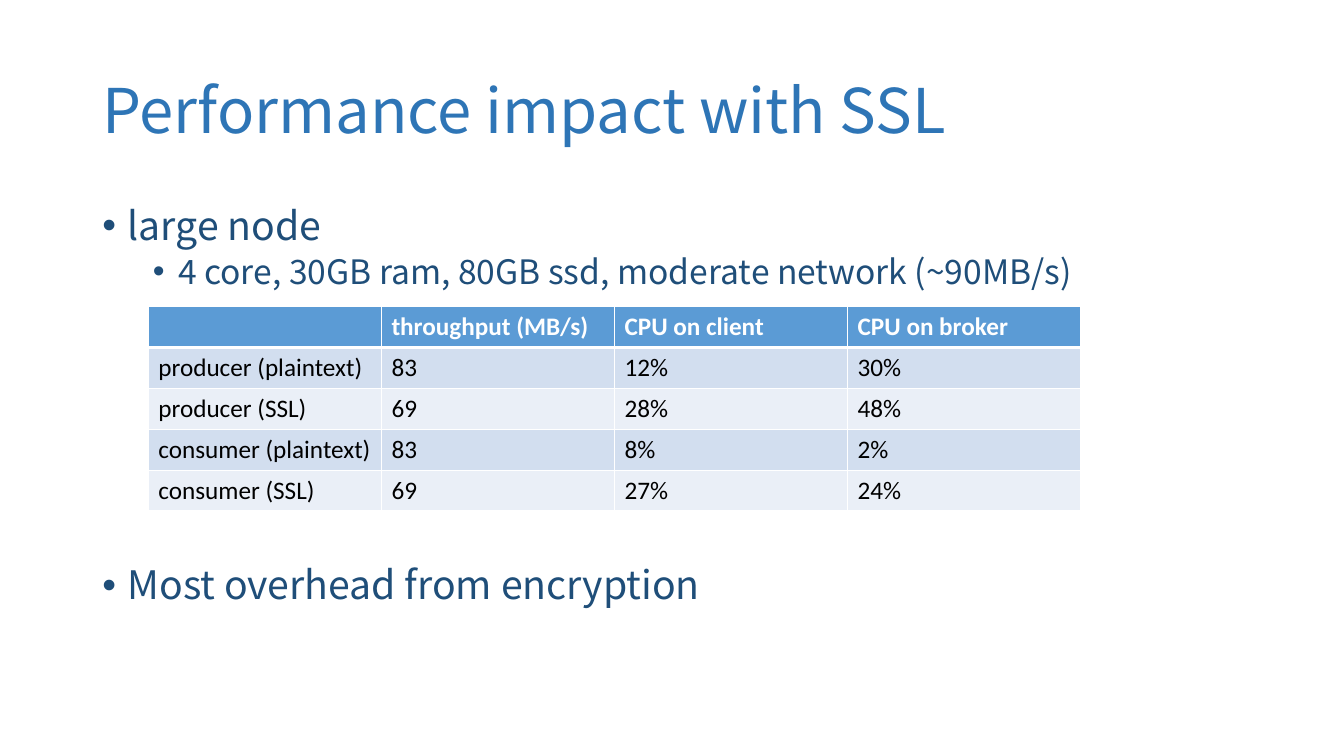
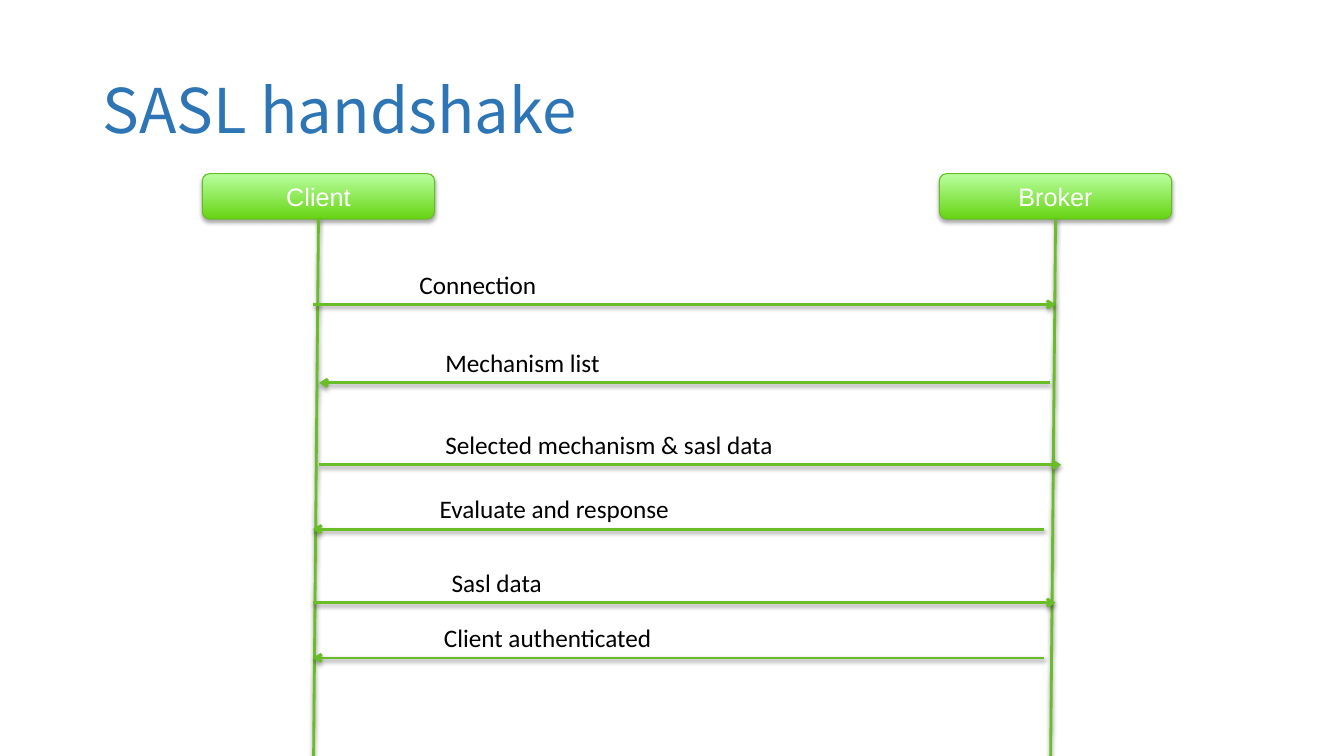
"""Build two slides on SSL cost and the SASL handshake."""
from lxml import etree
from pptx import Presentation
from pptx.dml.color import RGBColor
from pptx.enum import dml, shapes, text
from pptx.oxml import ns, parse_xml
from pptx.util import Pt

BLUE = RGBColor(0x2E, 0x75, 0xB6)
NAVY = RGBColor(0x1F, 0x4E, 0x79)
HEAD = RGBColor(0x5B, 0x9B, 0xD5)
BANDS = RGBColor(0xEA, 0xEF, 0xF7), RGBColor(0xD2, 0xDE, 0xEF)
WHITE = RGBColor(0xFF, 0xFF, 0xFF)
BLACK = RGBColor(0, 0, 0)
GREEN = RGBColor(0x69, 0xBE, 0x28)
EDGE = RGBColor(0x66, 0xBD, 0x23)
SHADE = RGBColor(0x66, 0xD4, 0x12), RGBColor(0xB9, 0xFF, 0xA0)
SANS = "Noto Sans CJK SC"
WIDE, HIGH = 960, 540

POINTS = [
    (0, "large node", 28, 0),
    (1, "4 core, 30GB ram, 80GB ssd, moderate network (~90MB/s)", 24, 4.5),
    (0, "Most overhead from encryption", 28, 196),
]
LOADS = [
    ("", "throughput (MB/s)", "CPU on client", "CPU on broker"),
    ("producer (plaintext)", "83", "12%", "30%"),
    ("producer (SSL)", "69", "28%", "48%"),
    ("consumer (plaintext)", "83", "8%", "2%"),
    ("consumer (SSL)", "69", "27%", "24%"),
]
ROLES = [("Client", 144.5), ("Broker", 671)]
ROLE_W, ROLE_TOP, ROLE_H = 166, 124, 32.5
STEPS = [
    ("Connection", 223.5, 754, 217.5, 292.5, 457),
    ("Mechanism list", 750, 228, 273.5, 311, 275),
    ("Selected mechanism & sasl data", 228, 758, 332, 311, 251),
    ("Evaluate and response", 746, 223.5, 378, 307, 355),
    ("Sasl data", 223.5, 754, 430.5, 315.5, 355),
    ("Client authenticated", 746, 223.5, 470, 310, 355),
]


def place(shape, *box):
    """Set left, top, width and height in points."""
    shape.left, shape.top, shape.width, shape.height = map(Pt, box)


def style(para, face, size, color, bold=False):
    """Set the font of a paragraph."""
    font = para.font
    font.name, font.size, font.bold = face, Pt(size), bold
    font.color.rgb = color


def start(deck, layout, title):
    """Add a slide with the shared title style."""
    slide = deck.slides.add_slide(deck.slide_layouts[layout])
    head = slide.shapes.title
    place(head, 66, 29, 828, 104)
    frame = head.text_frame
    frame.text = title
    frame.auto_size = text.MSO_AUTO_SIZE.NONE
    frame.vertical_anchor = text.MSO_ANCHOR.MIDDLE
    para = frame.paragraphs[0]
    para.alignment = text.PP_ALIGN.LEFT
    para.line_spacing = 0.9
    style(para, SANS, 44, BLUE)
    return slide


def bullets(body, items):
    """Fill a body placeholder with a bulleted list."""
    place(body, 66, 144, 828, 343)
    frame = body.text_frame
    frame.auto_size = text.MSO_AUTO_SIZE.NONE
    for row, (level, words, size, gap) in enumerate(items):
        para = frame.add_paragraph() if row else frame.paragraphs[0]
        para.text, para.level = words, level
        para.line_spacing, para.space_before = 0.9, Pt(gap)
        props = para._p.get_or_add_pPr()
        props.set("marL", str(Pt(18 + 36 * level)))
        props.set("indent", str(Pt(-18)))
        etree.SubElement(props, ns.qn("a:buFont")).set("typeface", "Arial")
        etree.SubElement(props, ns.qn("a:buChar")).set("char", "•")
        style(para, SANS, size, NAVY)


def border(cell, row):
    """Draw white cell borders, thick under the header."""
    props = cell._tc.get_or_add_tcPr()
    sides = {"L": 1, "R": 1, "T": 3 if row == 1 else 1, "B": 1 if row else 3}
    for side, width in sides.items():
        props.append(parse_xml(
            f'<a:ln{side} {ns.nsdecls("a")} w="{Pt(width)}"><a:solidFill>'
            f'<a:srgbClr val="{WHITE}"/></a:solidFill></a:ln{side}>'))


def grid(slide, data, left, top, width, height):
    """Add a banded table."""
    box = map(Pt, (left, top, width, height))
    table = slide.shapes.add_table(len(data), len(data[0]), *box).table
    for row, line in enumerate(data):
        for col, words in enumerate(line):
            cell = table.cell(row, col)
            cell.text = words
            border(cell, row)
            cell.fill.solid()
            cell.fill.fore_color.rgb = BANDS[row % 2] if row else HEAD
            color = BLACK if row else WHITE
            style(cell.text_frame.paragraphs[0], "Calibri", 18, color, not row)


def shadow(shape, alpha, drop):
    """Give a shape or line a soft shadow below."""
    props = shape.element.spPr
    for old in props.findall(ns.qn("a:effectLst")):
        props.remove(old)
    props.append(parse_xml(
        f'<a:effectLst {ns.nsdecls("a")}><a:outerShdw blurRad="{Pt(3.1)}" '
        f'dist="{Pt(drop)}" dir="5400000" rotWithShape="0">'
        f'<a:srgbClr val="{BLACK}"><a:alpha val="{alpha * 1000}"/>'
        '</a:srgbClr></a:outerShdw></a:effectLst>'))


def line(slide, *ends, arrow=False):
    """Add a green line, with an arrowhead at its end if asked."""
    link = slide.shapes.add_connector(
        shapes.MSO_CONNECTOR.STRAIGHT, *map(Pt, ends))
    link.line.color.rgb = GREEN
    link.line.width = Pt(2)
    if arrow:
        stroke = link.element.spPr.find(ns.qn("a:ln"))
        etree.SubElement(stroke, ns.qn("a:tailEnd")).set("type", "arrow")
    shadow(link, 38, 1.6)


def role(slide, name, left):
    """Add a role box with its lifeline."""
    box = slide.shapes.add_shape(
        shapes.MSO_SHAPE.ROUNDED_RECTANGLE,
        *map(Pt, (left, ROLE_TOP, ROLE_W, ROLE_H)))
    box.fill.gradient()
    box.fill.gradient_angle = 90
    for stop, color in zip(box.fill.gradient_stops, SHADE):
        stop.color.rgb = color
    box.line.color.rgb = EDGE
    box.line.width = Pt(0.75)
    box.line.dash_style = dml.MSO_LINE.SOLID
    shadow(box, 35, 1.8)
    frame = box.text_frame
    frame.text = name
    frame.vertical_anchor = text.MSO_ANCHOR.MIDDLE
    para = frame.paragraphs[0]
    para.alignment = text.PP_ALIGN.CENTER
    style(para, "Arial", 18, WHITE)
    mid = left + ROLE_W / 2
    line(slide, mid, ROLE_TOP + ROLE_H, mid - 3.5, HIGH)


def step(slide, words, tail, tip, top, left, width):
    """Add a message arrow with its label above."""
    line(slide, tail, top, tip, top, arrow=True)
    box = slide.shapes.add_textbox(*map(Pt, (left, top - 29, width, 29)))
    frame = box.text_frame
    frame.word_wrap = True
    frame.text = words
    style(frame.paragraphs[0], "Calibri", 18, BLACK)


def main():
    """Build and save the deck."""
    deck = Presentation()
    deck.slide_width, deck.slide_height = Pt(WIDE), Pt(HIGH)

    cost = start(deck, 1, "Performance impact with SSL")
    bullets(cost.placeholders[1], POINTS)
    grid(cost, LOADS, 106, 219, 666, 146)

    shake = start(deck, 5, "SASL handshake")
    for item in ROLES:
        role(shake, *item)
    for item in STEPS:
        step(shake, *item)

    deck.save("out.pptx")


if __name__ == "__main__":
    main()
